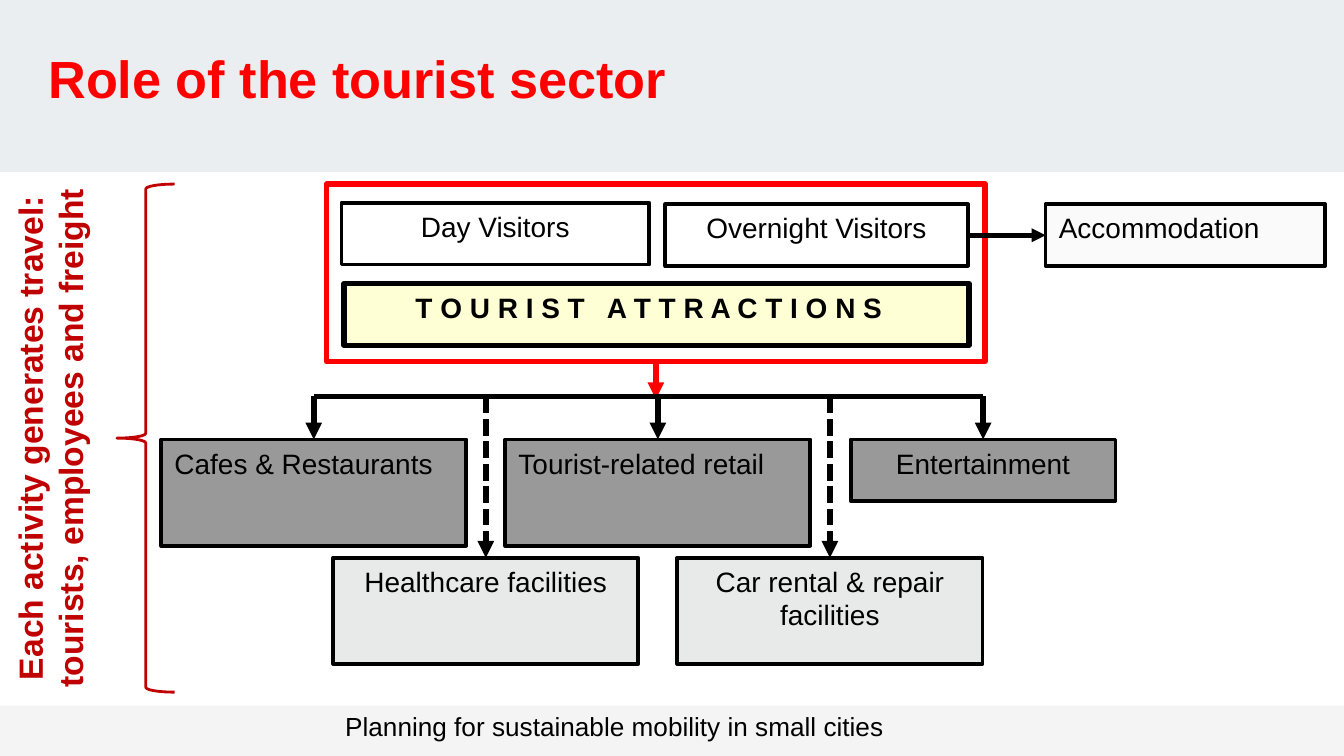
import dataclasses
import typing

import lxml.etree
import pptx
import pptx.dml.color
import pptx.enum.dml
import pptx.enum.shapes
import pptx.enum.text
import pptx.oxml.ns
import pptx.util

Inches = pptx.util.Inches
Shape = pptx.enum.shapes.MSO_SHAPE
Align = pptx.enum.text.PP_ALIGN
TOP, LEFT, BOTTOM, RIGHT = range(4)
COLOURS = {
    "black": "000000", "red": "FF0000", "dark red": "C00000",
    "yellow": "FFFFD6", "pale": "FAFAFA",
    "grey": "999999", "light grey": "E8E9E9",
    "header": "EBEEF0", "footer": "F4F4F4",
}


@dataclasses.dataclass
class Panel:
    left: float
    top: float
    width: float
    height: float
    fill: typing.Optional[str] = None
    line: typing.Optional[str] = "black"
    weight: float = 2
    text: str = ""
    align: Align = Align.CENTER
    bold: bool = False
    kind: Shape = Shape.RECTANGLE

    def place(self) -> tuple:
        return tuple(Inches(n) for n in (self.left, self.top, self.width, self.height))

    def centre(self) -> float:
        return self.left + self.width / 2


def colour(name: str) -> pptx.dml.color.RGBColor:
    return pptx.dml.color.RGBColor.from_string(COLOURS[name])


def write(box, text: str, size: float, ink: str, bold: bool, align: Align, **frame_format) -> None:
    frame = box.text_frame
    for name, value in {"word_wrap": True, **frame_format}.items():
        setattr(frame, name, value)
    para = frame.paragraphs[0]
    para.alignment = align
    span = para.add_run()
    span.text = text
    for name, value in {"name": "Arial", "size": pptx.util.Pt(size), "bold": bold}.items():
        setattr(span.font, name, value)
    span.font.color.rgb = colour(ink)


def draw_panel(page, panel: Panel):
    box = page.shapes.add_shape(panel.kind, *panel.place())
    box.shadow.inherit = False
    if panel.fill:
        box.fill.solid()
        box.fill.fore_color.rgb = colour(panel.fill)
    else:
        box.fill.background()
    if panel.line:
        box.line.color.rgb = colour(panel.line)
        box.line.width = pptx.util.Pt(panel.weight)
    else:
        box.line.fill.background()
    if panel.text:
        write(box, panel.text, 15, "black", panel.bold, panel.align,
              vertical_anchor=pptx.enum.text.MSO_ANCHOR.TOP)
    return box


def draw_line(page, start: tuple, end: tuple, weight: float = 3, ink: str = "black",
              dashed: bool = False, arrow: bool = True):
    line = page.shapes.add_connector(pptx.enum.shapes.MSO_CONNECTOR.STRAIGHT,
                                     *(Inches(n) for n in start + end))
    line.line.color.rgb = colour(ink)
    line.line.width = pptx.util.Pt(weight)
    if dashed:
        line.line.dash_style = pptx.enum.dml.MSO_LINE.SQUARE_DOT
    qn = pptx.oxml.ns.qn
    if arrow:
        lxml.etree.SubElement(line.line._get_or_add_ln(), qn("a:tailEnd"), type="triangle")
    lxml.etree.SubElement(line._element.spPr, qn("a:effectLst"))
    return line


def draw_text(page, place: tuple, text: str, size: float, ink: str, bold: bool, align: Align):
    box = page.shapes.add_textbox(*(Inches(n) for n in place))
    write(box, text, size, ink, bold, align)
    return box


def draw_title(page) -> None:
    title = page.shapes.title
    place = {"left": 0.29, "top": 0.1, "width": 7.25, "height": 0.95}
    for name, value in place.items():
        setattr(title, name, Inches(value))
    write(title, "Role of the tourist sector", 28, "red", True, Align.LEFT,
          vertical_anchor=pptx.enum.text.MSO_ANCHOR.MIDDLE,
          auto_size=pptx.enum.text.MSO_AUTO_SIZE.NONE,
          margin_left=Inches(0.07), margin_right=Inches(0.07),
          margin_top=Inches(0.04), margin_bottom=Inches(0.04))


def draw_visitors(page) -> None:
    """Draw the framed visitor groups and the arrow to accommodation."""
    attractions = draw_panel(page, Panel(2.56, 2.11, 4.65, 0.46, "yellow", weight=2.75,
                                         text=" ".join("TOURIST ATTRACTIONS"), bold=True))
    attractions.text_frame.margin_right = Inches(0.21)
    draw_panel(page, Panel(2.54, 1.51, 2.29, 0.46, text="Day Visitors"))
    overnight = draw_panel(page, Panel(4.95, 1.52, 2.25, 0.46, text="Overnight Visitors"))
    accommodation = draw_panel(page, Panel(7.78, 1.52, 2.08, 0.46, "pale",
                                           text="Accommodation", align=Align.LEFT))
    frame = Panel(2.43, 1.37, 4.9, 1.32, line="red", weight=3)
    frame_box = draw_panel(page, frame)
    stay = draw_line(page, (7.2, 1.75), (7.78, 1.75), 2.5)
    stay.begin_connect(overnight, RIGHT)
    stay.end_connect(accommodation, LEFT)
    middle = frame.centre()
    down = draw_line(page, (middle, 2.69), (middle, 2.97), ink="red")
    down.begin_connect(frame_box, BOTTOM)


def draw_services(page) -> None:
    """Draw the services and the branching arrows that lead to them."""
    first, step, width, height = 1.2, 1.28, 2.27, 0.79
    upper, lower, branch = 3.27, 4.15, 2.95
    direct = [
        Panel(first, upper, width, height, "grey", text="Cafes & Restaurants", align=Align.LEFT),
        Panel(first + 2 * step, upper, width, height, "grey",
              text="Tourist-related retail", align=Align.LEFT),
        Panel(6.33, upper, 1.97, 0.46, "grey", text="Entertainment"),
    ]
    indirect = [
        Panel(first + step * place, lower, width, height, "light grey", text=text)
        for place, text in ((1, "Healthcare facilities"), (3, "Car rental & repair facilities"))
    ]
    draw_line(page, (direct[0].centre(), branch), (direct[-1].centre(), branch), 2.5, arrow=False)
    for panel in direct + indirect:
        box = draw_panel(page, panel)
        middle = panel.centre()
        arrow = draw_line(page, (middle, branch), (middle, panel.top), dashed=panel in indirect)
        arrow.end_connect(box, TOP)


def main() -> None:
    deck = pptx.Presentation()
    deck.slide_width = Inches(10)
    deck.slide_height = deck.slide_width * 9 // 16
    page = deck.slides.add_slide(deck.slide_layouts[5])
    header = draw_panel(page, Panel(0, 0, 10, 1.28, "header", None))
    page.shapes.title._element.addprevious(header._element)
    footer = draw_panel(page, Panel(0, 5.25, 10, 0.38, "footer", None))
    footer.height = deck.slide_height - footer.top
    draw_title(page)
    draw_visitors(page)
    draw_services(page)
    side = draw_text(page, (0.02, 1.25, 0.81, 4.02),
                     "Each activity generates travel: tourists, employees and freight",
                     18, "dark red", True, Align.CENTER)
    side.text_frame._txBody.bodyPr.set("vert", "vert270")
    draw_panel(page, Panel(0.87, 1.37, 0.43, 3.78, line="dark red", weight=1.5,
                           kind=Shape.LEFT_BRACE))
    draw_text(page, (2.47, 5.24, 4.57, 0.34),
              "Planning for sustainable mobility in small cities",
              14, "black", False, Align.LEFT)
    deck.save("out.pptx")


if __name__ == "__main__":
    main()
